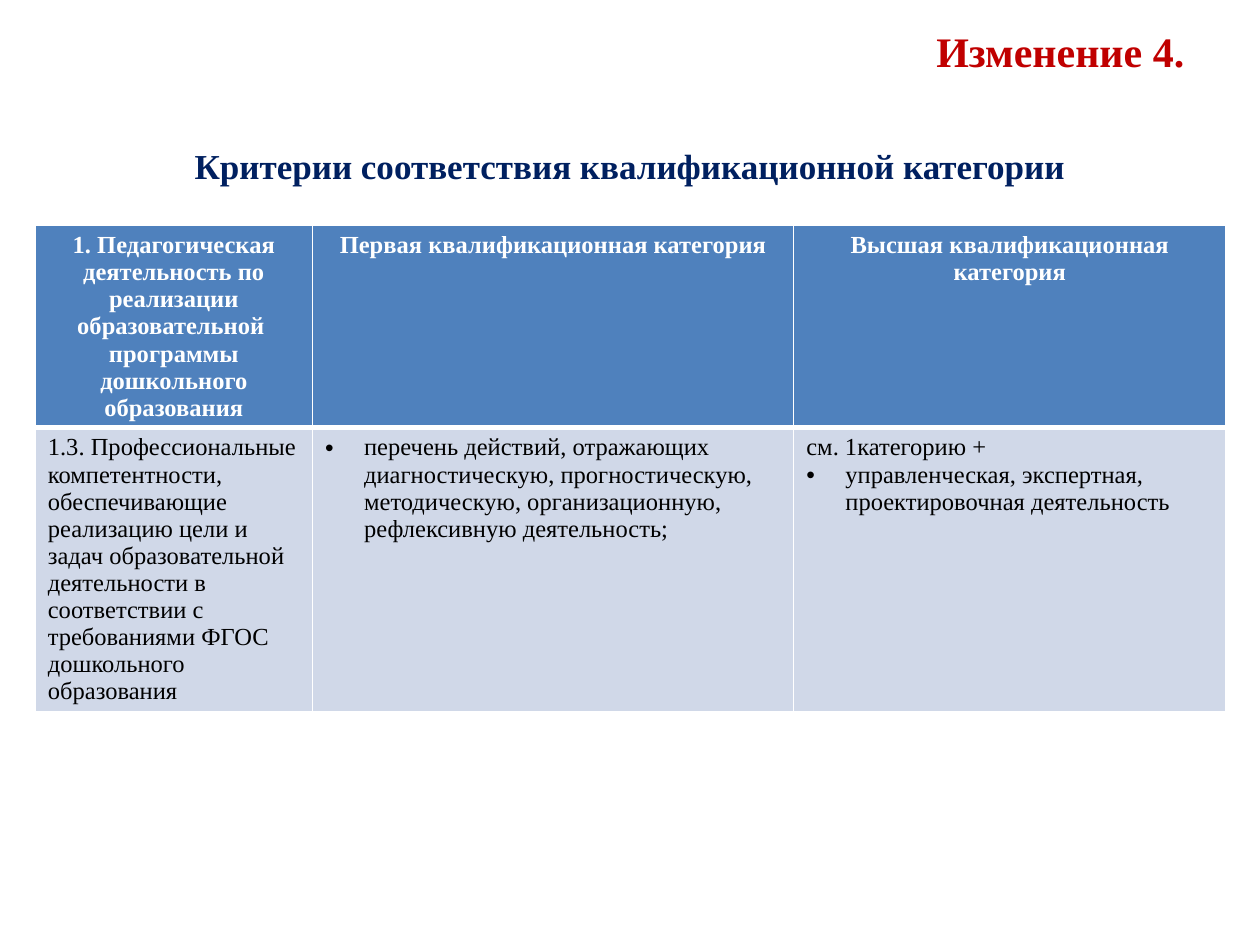
from lxml.etree import SubElement
from pptx import Presentation
from pptx.dml.color import RGBColor
from pptx.enum.text import MSO_ANCHOR, MSO_AUTO_SIZE, PP_ALIGN as AL
from pptx.oxml.ns import qn
from pptx.util import Inches, Pt

FONT = "Times New Roman"
RED = RGBColor(0xC0, 0x00, 0x00)
NAVY = RGBColor(0x00, 0x20, 0x60)
BLUE = RGBColor(0x4F, 0x81, 0xBD)
PALE = RGBColor(0xD0, 0xD8, 0xE8)
WHITE = RGBColor(0xFF, 0xFF, 0xFF)
BLACK = RGBColor(0x00, 0x00, 0x00)

BULLET = "•"
COL_WIDTHS = [2.2, 3.82, 3.43]
ROW_HEIGHTS = [0.75, 2.04]
HEADERS = [
    "1. Педагогическая деятельность по реализации образовательной  программы "
    "дошкольного образования",
    "Первая квалификационная категория",
    "Высшая квалификационная категория",
]
# Each cell is a list of paragraphs; a leading bullet marks a list item.
CRITERIA = [
    ["1.3. Профессиональные компетентности, обеспечивающие реализацию цели и "
     "задач образовательной деятельности в соответствии с требованиями ФГОС "
     "дошкольного образования"],
    [BULLET + "перечень действий, отражающих диагностическую, прогностическую,  "
     "методическую, организационную, рефлексивную деятельность;"],
    ["см. 1категорию +",
     BULLET + "управленческая, экспертная,  проектировочная деятельность"],
]


def set_bullet(p, char=None):
    """Give the paragraph a hanging bullet, or none at all."""
    pPr = p._p.get_or_add_pPr()
    indent = Inches(0.31) if char else 0
    pPr.set("marL", str(indent))
    pPr.set("indent", str(-indent))
    if char:
        SubElement(pPr, qn("a:buFont"), typeface="Arial")
        SubElement(pPr, qn("a:buChar"), char=char)
    else:
        SubElement(pPr, qn("a:buNone"))


def write(tf, paragraphs, size=14, color=BLACK, bold=False, align=AL.LEFT):
    for i, text in enumerate(paragraphs):
        p = tf.add_paragraph() if i else tf.paragraphs[0]
        p.alignment = align
        p.space_before = Pt(0)
        set_bullet(p, BULLET if text.startswith(BULLET) else None)
        r = p.add_run()
        r.text = text.removeprefix(BULLET)
        r.font.name = FONT
        r.font.size = Pt(size)
        r.font.bold = bold
        r.font.color.rgb = color


def set_borders(cell, **widths):
    """Draw white borders; keys are L, R, T and B, in that order, in points."""
    tcPr = cell._tc.get_or_add_tcPr()
    for i, (side, width) in enumerate(widths.items()):
        ln = tcPr.makeelement(qn(f"a:ln{side}"), {"w": str(Pt(width))})
        fill = SubElement(ln, qn("a:solidFill"))
        SubElement(fill, qn("a:srgbClr"), val=str(WHITE))
        tcPr.insert(i, ln)


def fill_placeholder(sp, box, text, **fmt):
    sp.left, sp.top, sp.width, sp.height = (Inches(v) for v in box)
    tf = sp.text_frame
    tf.auto_size = MSO_AUTO_SIZE.NONE
    write(tf, [text], bold=True, **fmt)
    return tf


def add_criteria_table(slide, left, top):
    frame = slide.shapes.add_table(
        len(ROW_HEIGHTS), len(COL_WIDTHS), Inches(left), Inches(top),
        Inches(sum(COL_WIDTHS)), Inches(sum(ROW_HEIGHTS)))
    table = frame.table
    for col, width in zip(table.columns, COL_WIDTHS):
        col.width = Inches(width)
    for row, height in zip(table.rows, ROW_HEIGHTS):
        row.height = Inches(height)

    for c, (header, criteria) in enumerate(zip(HEADERS, CRITERIA)):
        head, body = table.cell(0, c), table.cell(1, c)
        write(head.text_frame, [header], color=WHITE, bold=True, align=AL.CENTER)
        write(body.text_frame, criteria)
        for cell, color, top_w, bottom_w in ((head, BLUE, 1, 3), (body, PALE, 3, 1)):
            cell.fill.solid()
            cell.fill.fore_color.rgb = color
            set_borders(cell, L=1, R=1, T=top_w, B=bottom_w)


def build_slide(prs):
    slide = prs.slides.add_slide(prs.slide_layouts[1])
    title, body = slide.placeholders
    tf = fill_placeholder(title, (0.5, 0.13, 9, 0.55), "Изменение 4.",
                          size=24, color=RED, align=AL.RIGHT)
    tf.vertical_anchor = MSO_ANCHOR.MIDDLE
    tf = fill_placeholder(body, (0.5, 0.68, 9, 6.02),
                          "Критерии соответствия квалификационной категории",
                          size=20, color=NAVY, align=AL.CENTER)
    tf.margin_top = Inches(0.47)
    add_criteria_table(slide, 0.28, 1.79)


def main():
    prs = Presentation()
    prs.slide_width, prs.slide_height = Inches(10), Inches(7.5)
    build_slide(prs)
    prs.save("out.pptx")


if __name__ == "__main__":
    main()
